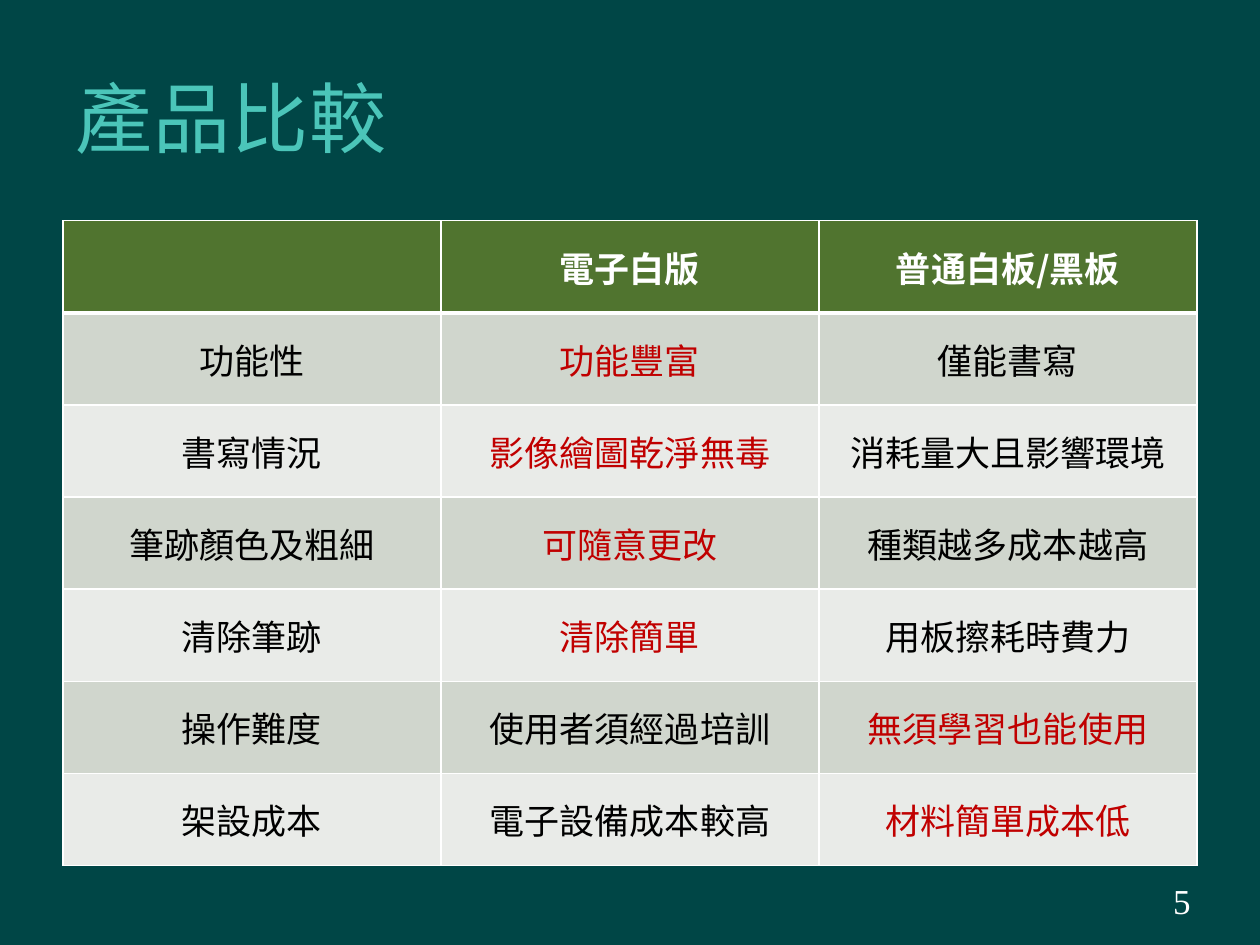
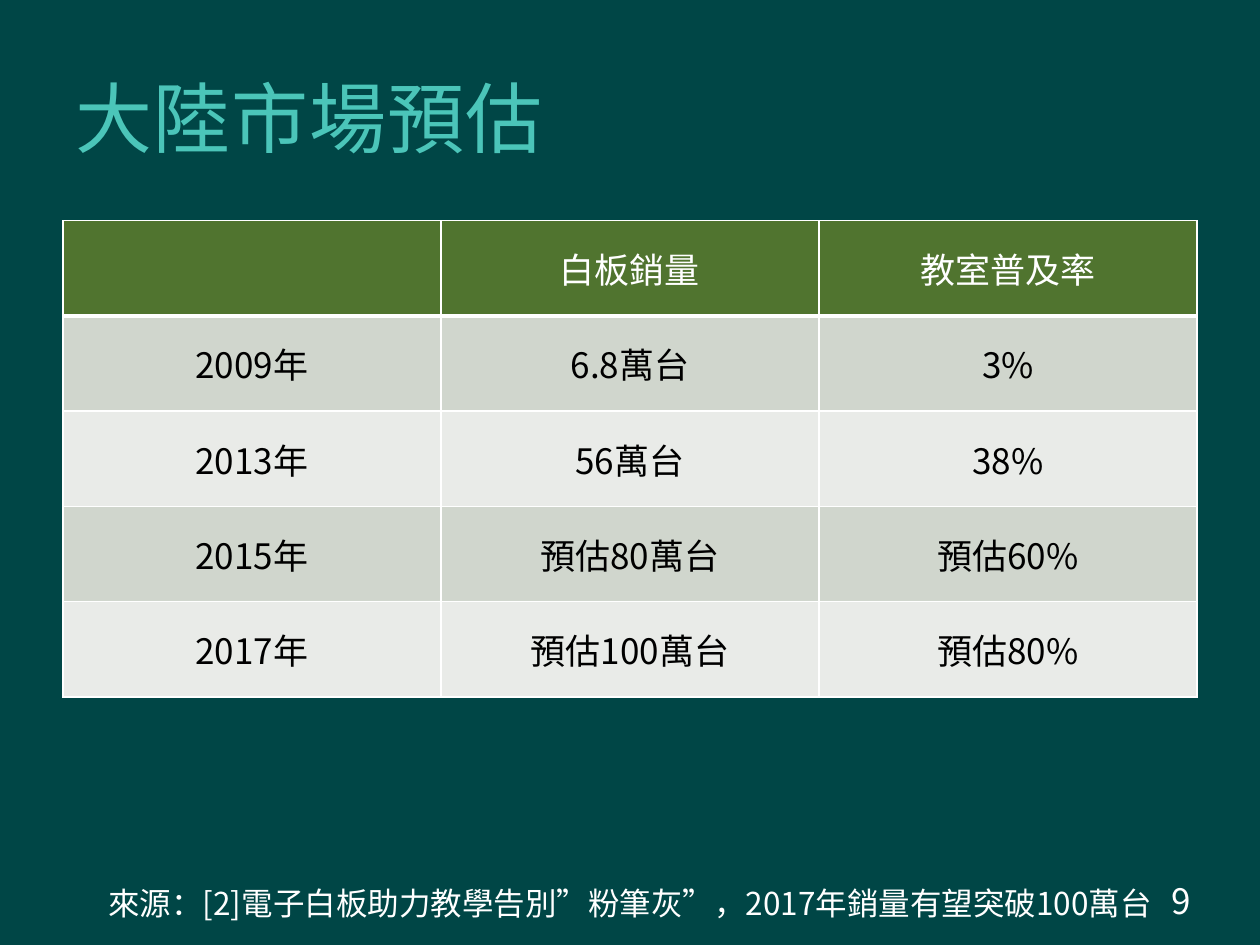
from dataclasses import dataclass

from lxml.etree import SubElement
from pptx import Presentation
from pptx.dml.color import RGBColor
from pptx.enum.text import MSO_ANCHOR, PP_ALIGN
from pptx.oxml.ns import qn
from pptx.util import Cm, Pt

# Shared look
SANS = "Noto Sans CJK SC"
BACKGROUND, TITLE_COLOUR = "004646", "4BC5B9"
HEADER_FILL, BAND_FILLS = "50742F", ("D0D6CD", "E9EBE8")
WHITE, BLACK, RED = "FFFFFF", "000000", "C00000"
MARGIN, COLUMN_WIDTH = 1.27, 7.62


@dataclass
class ComparisonTable:
    rows: list[tuple[str, str, str]]
    height: float
    header_bold: bool = False
    winners: tuple[str, ...] = ()


@dataclass
class TableSlide:
    title: str
    table: ComparisonTable
    number: str
    number_font: str
    source: str = ""


SLIDES = [
    TableSlide(
        "產品比較",
        ComparisonTable(
            [
                ("", "電子白版", "普通白板/黑板"),
                ("功能性", "功能豐富", "僅能書寫"),
                ("書寫情況", "影像繪圖乾淨無毒", "消耗量大且影響環境"),
                ("筆跡顏色及粗細", "可隨意更改", "種類越多成本越高"),
                ("清除筆跡", "清除簡單", "用板擦耗時費力"),
                ("操作難度", "使用者須經過培訓", "無須學習也能使用"),
                ("架設成本", "電子設備成本較高", "材料簡單成本低"),
            ],
            height=13,
            header_bold=True,
            winners=("功能豐富", "影像繪圖乾淨無毒", "可隨意更改", "清除簡單",
                     "無須學習也能使用", "材料簡單成本低"),
        ),
        number="5",
        number_font="Times New Roman",
    ),
    TableSlide(
        "大陸市場預估",
        ComparisonTable(
            [
                ("", "白板銷量", "教室普及率"),
                ("2009年", "6.8萬台", "3%"),
                ("2013年", "56萬台", "38%"),
                ("2015年", "預估80萬台", "預估60%"),
                ("2017年", "預估100萬台", "預估80%"),
            ],
            height=9.6,
        ),
        number="9",
        number_font="Noto Sans CJK TC",
        source="來源：[2]電子白板助力教學告別”粉筆灰”，2017年銷量有望突破100萬台",
    ),
]


def colour(value: str) -> RGBColor:
    return RGBColor.from_string(value)


def write(frame, text: str, *, size: float = 20, font: str = SANS, ink: str = WHITE,
          bold: bool = False, align=PP_ALIGN.CENTER, spacing: float = 0) -> None:
    """Put one formatted span into the first paragraph of a text frame."""
    frame.word_wrap = True
    para = frame.paragraphs[0]
    para.alignment = align
    span = para.add_run()
    span.text = text
    span.font.size, span.font.bold = Pt(size), bold
    span.font.color.rgb = colour(ink)
    span.font.name = font
    properties = span.font._element
    SubElement(properties, qn("a:ea")).set("typeface", font)
    if spacing:
        properties.set("spc", str(round(spacing * 100)))


def place(shape, left: float, top: float, width: float, height: float) -> None:
    shape.left, shape.top, shape.width, shape.height = map(Cm, (left, top, width, height))


def add_border(cell, side: str, width: float) -> None:
    line = SubElement(cell._tc.get_or_add_tcPr(), qn(f"a:ln{side}"), w=str(Pt(width)))
    fill = SubElement(line, qn("a:solidFill"))
    SubElement(fill, qn("a:srgbClr"), val=WHITE)


def add_title(page, text: str) -> None:
    title = page.shapes.title
    place(title, MARGIN, 0.76, 21.59, 3.18)
    title.text_frame.vertical_anchor = MSO_ANCHOR.MIDDLE
    write(title.text_frame, text, size=44, ink=TITLE_COLOUR, align=PP_ALIGN.LEFT, spacing=0.5)


def add_table(page, data: ComparisonTable) -> None:
    row_count, column_count = len(data.rows), len(data.rows[0])
    table = page.shapes.add_table(
        row_count, column_count, Cm(MARGIN), Cm(4.45),
        Cm(COLUMN_WIDTH * column_count), Cm(data.height)).table
    for column in table.columns:
        column.width = Cm(COLUMN_WIDTH)
    for index, words in enumerate(data.rows):
        header = index == 0
        table.rows[index].height = Cm(data.height / row_count)
        for cell, text in zip(table.rows[index].cells, words):
            # The rule under the header is heavier than the others
            borders = {"L": 1, "R": 1, "T": 3 if index == 1 else 1, "B": 3 if header else 1}
            for side, width in borders.items():
                add_border(cell, side, width)
            cell.fill.solid()
            cell.fill.fore_color.rgb = colour(
                HEADER_FILL if header else BAND_FILLS[(index - 1) % 2])
            cell.vertical_anchor = MSO_ANCHOR.MIDDLE
            if text:
                ink = WHITE if header else RED if text in data.winners else BLACK
                write(cell.text_frame, text, ink=ink, bold=header and data.header_bold)


def add_text(page, text: str, left: float, top: float, width: float, height: float,
             inset: float = 0.25, **style) -> None:
    box = page.shapes.add_textbox(Cm(left), Cm(top), Cm(width), Cm(height))
    frame = box.text_frame
    frame.vertical_anchor = MSO_ANCHOR.MIDDLE
    frame.margin_left = frame.margin_right = Cm(inset)
    frame.margin_top = frame.margin_bottom = Cm(0.13)
    write(frame, text, **style)


def main() -> None:
    deck = Presentation()
    deck.slide_width, deck.slide_height = Cm(25.4), Cm(19.05)
    background = deck.slide_master.background.fill
    background.solid()
    background.fore_color.rgb = colour(BACKGROUND)

    for content in SLIDES:
        page = deck.slides.add_slide(deck.slide_layouts.get_by_name("Title Only"))
        add_title(page, content.title)
        add_table(page, content.table)
        # Footer: page number and, where given, the source
        add_text(page, content.number, 18.21, 17.65, 5.92, 1.02, inset=0.13,
                 font=content.number_font, align=PP_ALIGN.RIGHT)
        if content.source:
            add_text(page, content.source, 0, 17.7, 25.4, 1.02, size=18)

    deck.save("out.pptx")


if __name__ == "__main__":
    main()
